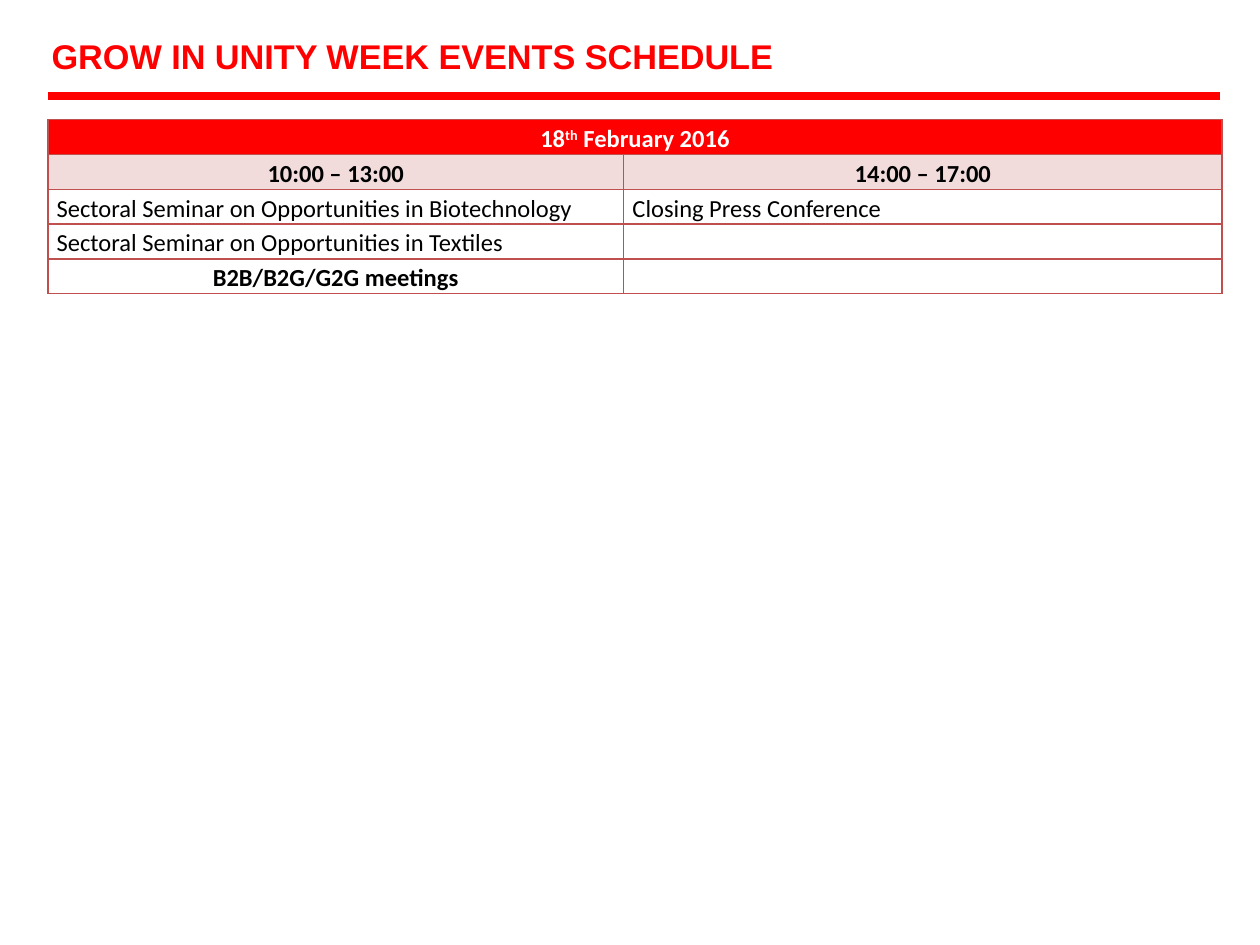
import lxml.etree
import pptx
import pptx.dml.color
import pptx.enum.shapes
import pptx.enum.text
import pptx.oxml.ns
import pptx.util

Inches, Pt = pptx.util.Inches, pptx.util.Pt
ALIGN = pptx.enum.text.PP_ALIGN
qn = pptx.oxml.ns.qn
RED, PINK, BORDER = "FF0000", "F2DBDB", "C0504D"


def rgb(value):
    return pptx.dml.color.RGBColor.from_string(value)


def add_run(p, text, size, font, color, bold):
    r = p.add_run()
    r.text = text
    r.font.size = Pt(size)
    r.font.name = font
    r.font.bold = bold
    r.font.color.rgb = rgb(color)
    return r


prs = pptx.Presentation()
prs.slide_width, prs.slide_height = Inches(10), Inches(7.5)
s = prs.slides.add_slide(prs.slide_layouts[5])

# Rule under the title
rule = s.shapes.add_connector(pptx.enum.shapes.MSO_CONNECTOR.STRAIGHT,
                              Inches(0.38), Inches(0.76), Inches(9.68), Inches(0.76))
rule.line.color.rgb = rgb(RED)
rule.line.width = Pt(4.5)
lxml.etree.SubElement(rule._element.spPr, qn("a:effectLst"))

# Title
sp = s.shapes.title
sp.left, sp.top, sp.width, sp.height = map(Inches, (0.31, 0.23, 9.62, 0.43))
tf = sp.text_frame
tf.word_wrap = True
tf.auto_size = pptx.enum.text.MSO_AUTO_SIZE.NONE
tf.vertical_anchor = pptx.enum.text.MSO_ANCHOR.TOP
p = tf.paragraphs[0]
p.alignment = ALIGN.LEFT
add_run(p, "GROW IN UNITY WEEK EVENTS SCHEDULE", 19.6, "Arial", RED, True)

# Schedule: each row is (cell texts, fill, text colour, bold and centred)
schedule = [
    ([["18", "th", " February 2016"], []], RED, "FFFFFF", True),
    ([["10:00 – 13:00"], ["14:00 – 17:00"]], PINK, "000000", True),
    ([["Sectoral Seminar on Opportunities in Biotechnology"],
      ["Closing Press Conference"]], None, "000000", False),
    ([["Sectoral Seminar on Opportunities in Textiles"], []], None, "000000", False),
    ([["B2B/B2G/G2G meetings"], []], None, "000000", True),
]
table = s.shapes.add_table(len(schedule), 2, Inches(0.38), Inches(0.95),
                           Inches(9.32), Inches(1.38)).table
table.first_row = table.horz_banding = False
for column, width in zip(table.columns, (4.57, 4.75)):
    column.width = Inches(width)

for i, (texts, fill, color, heading) in enumerate(schedule):
    for j, runs in enumerate(texts):
        cell = table.cell(i, j)
        cell.margin_left = cell.margin_right = Inches(0.07)
        cell.margin_top = cell.margin_bottom = 0
        tcPr = cell._tc.get_or_add_tcPr()
        for side in ("lnL", "lnR", "lnT", "lnB"):
            ln = lxml.etree.SubElement(tcPr, qn("a:" + side), w=str(Pt(1)))
            line_fill = lxml.etree.SubElement(ln, qn("a:solidFill"))
            lxml.etree.SubElement(line_fill, qn("a:srgbClr"), val=BORDER)
        if fill:
            cell.fill.solid()
            cell.fill.fore_color.rgb = rgb(fill)
        else:
            cell.fill.background()
        p = cell.text_frame.paragraphs[0]
        p.alignment = ALIGN.CENTER if heading else ALIGN.LEFT
        p.line_spacing = 1.15
        for text in runs:
            r = add_run(p, text, 14, "Calibri", color, heading)
            if text == "th":
                r.font._element.set("baseline", "30000")
        if not runs:  # keeps the empty cell from stretching its row
            lxml.etree.SubElement(p._p, qn("a:endParaRPr"), sz="1400")
table.cell(0, 0).merge(table.cell(0, 1))

prs.save("out.pptx")
